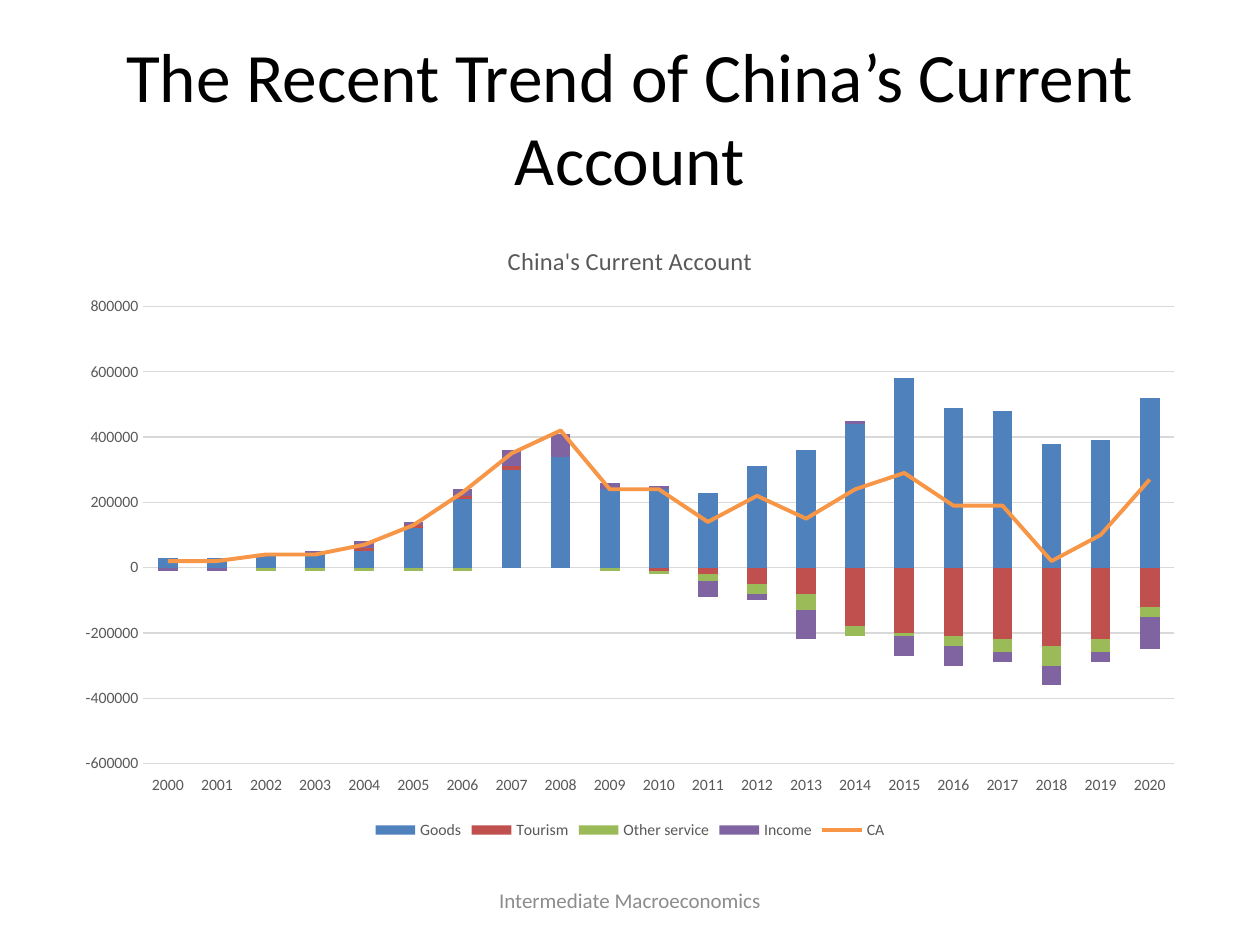
from lxml.etree import SubElement
from pptx import Presentation
from pptx.chart.data import CategoryChartData
from pptx.dml.color import RGBColor
from pptx.enum.chart import (XL_CHART_TYPE, XL_LEGEND_POSITION, XL_MARKER_STYLE,
                             XL_TICK_LABEL_POSITION, XL_TICK_MARK)
from pptx.enum.text import MSO_ANCHOR, PP_ALIGN
from pptx.oxml.ns import qn
from pptx.util import Cm, Pt

FONT = "Calibri"
GRAY = "595959"
GRID = "D9D9D9"
YEARS = [str(year) for year in range(2000, 2021)]
UNIT = 10000  # balances below are in units of 10000
BALANCES = {
    "Goods": ("4F81BD", [3, 3, 4, 4, 5, 12, 21, 30, 34, 24, 24,
                         23, 31, 36, 44, 58, 49, 48, 38, 39, 52]),
    "Tourism": ("C0504D", [0, 0, 0, 0, 1, 1, 1, 1, 0, 0, -1,
                           -2, -5, -8, -18, -20, -21, -22, -24, -22, -12]),
    "Other service": ("9BBB59", [0, 0, -1, -1, -1, -1, -1, 0, 0, -1, -1,
                                 -2, -3, -5, -3, -1, -3, -4, -6, -4, -3]),
    "Income": ("8064A2", [-1, -1, 0, 1, 2, 1, 2, 5, 7, 2, 1,
                          -5, -2, -9, 1, -6, -6, -3, -6, -3, -10]),
    "CA": ("F79646", [2, 2, 4, 4, 7, 13, 23, 35, 42, 24, 24,
                      14, 22, 15, 24, 29, 19, 19, 2, 10, 27]),
}


def color(value):
    return RGBColor.from_string(value)


def format_font(font, size, value):
    font.name = FONT
    font.size = Pt(size)
    font.bold = False
    font.color.rgb = color(value)


def write_text(shape, text, size, value):
    frame = shape.text_frame
    frame.word_wrap = True
    frame.vertical_anchor = MSO_ANCHOR.MIDDLE
    paragraph = frame.paragraphs[0]
    paragraph.alignment = PP_ALIGN.CENTER
    run = paragraph.add_run()
    run.text = text
    format_font(run.font, size, value)


def set_title(slide, text):
    title = slide.shapes.title
    title.left, title.top, title.width, title.height = Cm(1.27), Cm(0.76), Cm(22.86), Cm(3.18)
    write_text(title, text, 39.6, "000000")


def add_footer(slide, text):
    footer = slide.shapes.add_textbox(Cm(8.68), Cm(17.65), Cm(8.04), Cm(1.01))
    write_text(footer, text, 12, "8C8C8C")


def move_last_series_to_line(chart):
    """Turn the last column series into a line on the same axes."""
    columns = chart.plots[0]
    series = columns.series[-1]._element
    bar_chart = series.getparent()
    line_chart = bar_chart.makeelement(qn("c:lineChart"))
    bar_chart.addnext(line_chart)
    SubElement(line_chart, qn("c:grouping"), val="standard")
    SubElement(line_chart, qn("c:varyColors"), val="0")
    for invert in series.findall(qn("c:invertIfNegative")):
        series.remove(invert)
    line_chart.append(series)
    SubElement(line_chart, qn("c:marker"), val="1")
    for axis in bar_chart.findall(qn("c:axId")):
        SubElement(line_chart, qn("c:axId"), val=axis.get("val"))


def format_series(chart):
    columns, lines = chart.plots
    columns.gap_width = 150
    columns.overlap = 100
    columns.vary_by_categories = False
    for series in columns.series:
        series.format.fill.solid()
        series.format.fill.fore_color.rgb = color(BALANCES[series.name][0])
        series.invert_if_negative = False
    for series in lines.series:
        series.smooth = False
        series.marker.style = XL_MARKER_STYLE.NONE
        series.format.line.color.rgb = color(BALANCES[series.name][0])
        series.format.line.width = Pt(2.25)


def format_axes(chart):
    for axis in (chart.category_axis, chart.value_axis):
        axis.major_tick_mark = axis.minor_tick_mark = XL_TICK_MARK.NONE
        format_font(axis.tick_labels.font, 9, GRAY)
    chart.category_axis.tick_label_position = XL_TICK_LABEL_POSITION.LOW
    value_axis = chart.value_axis
    value_axis.minimum_scale, value_axis.maximum_scale = -600000, 800000
    value_axis.major_unit = 200000
    value_axis.format.line.fill.background()
    value_axis.has_major_gridlines = True
    for line in (chart.category_axis.format.line, value_axis.major_gridlines.format.line):
        line.color.rgb = color(GRID)
        line.width = Pt(0.75)


def add_account_chart(slide, title):
    data = CategoryChartData(number_format="General")
    data.categories = YEARS
    for name, (_, values) in BALANCES.items():
        data.add_series(name, [value * UNIT for value in values])
    chart = slide.shapes.add_chart(XL_CHART_TYPE.COLUMN_STACKED, Cm(1.27), Cm(4.45),
                                   Cm(22.86), Cm(12.57), data).chart
    format_font(chart.font, 10, "000000")
    move_last_series_to_line(chart)
    format_series(chart)
    format_axes(chart)
    chart.has_title = True
    run = chart.chart_title.text_frame.paragraphs[0].add_run()
    run.text = title
    format_font(run.font, 14, GRAY)
    chart.chart_title.include_in_layout = False
    chart.has_legend = True
    chart.legend.position = XL_LEGEND_POSITION.BOTTOM
    chart.legend.include_in_layout = False
    format_font(chart.legend.font, 9, GRAY)


def main():
    presentation = Presentation()
    presentation.slide_width, presentation.slide_height = Cm(25.4), Cm(19.05)
    slide = presentation.slides.add_slide(presentation.slide_layouts[5])
    set_title(slide, "The Recent Trend of China’s Current Account")
    add_footer(slide, "Intermediate Macroeconomics")
    add_account_chart(slide, "China's Current Account")
    presentation.save("out.pptx")


if __name__ == "__main__":
    main()
